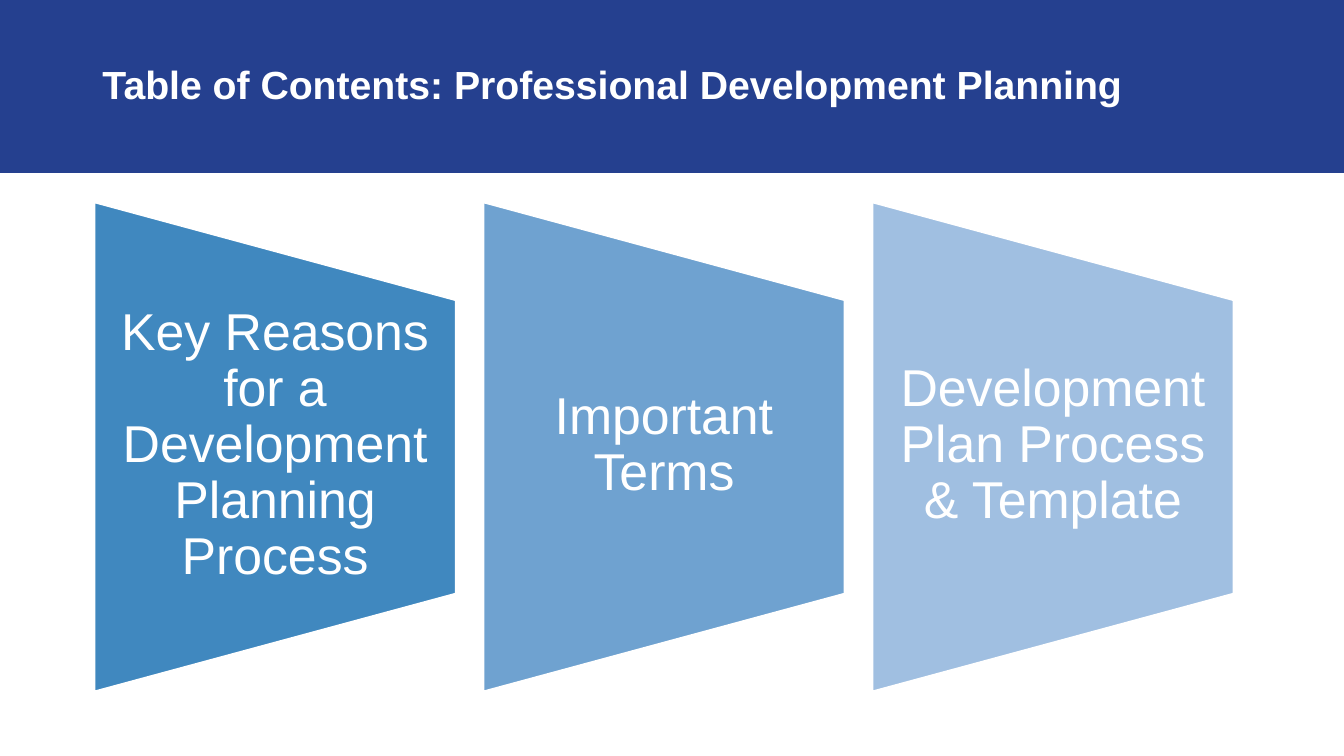
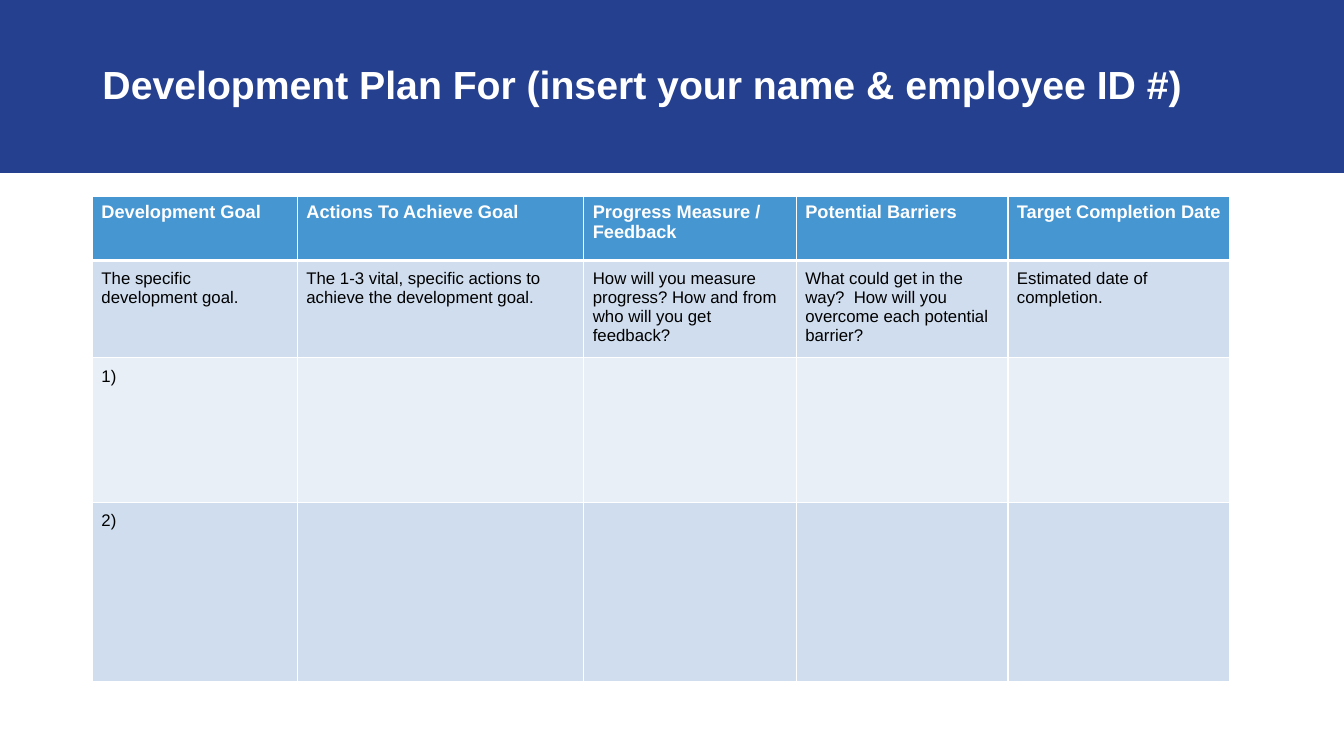
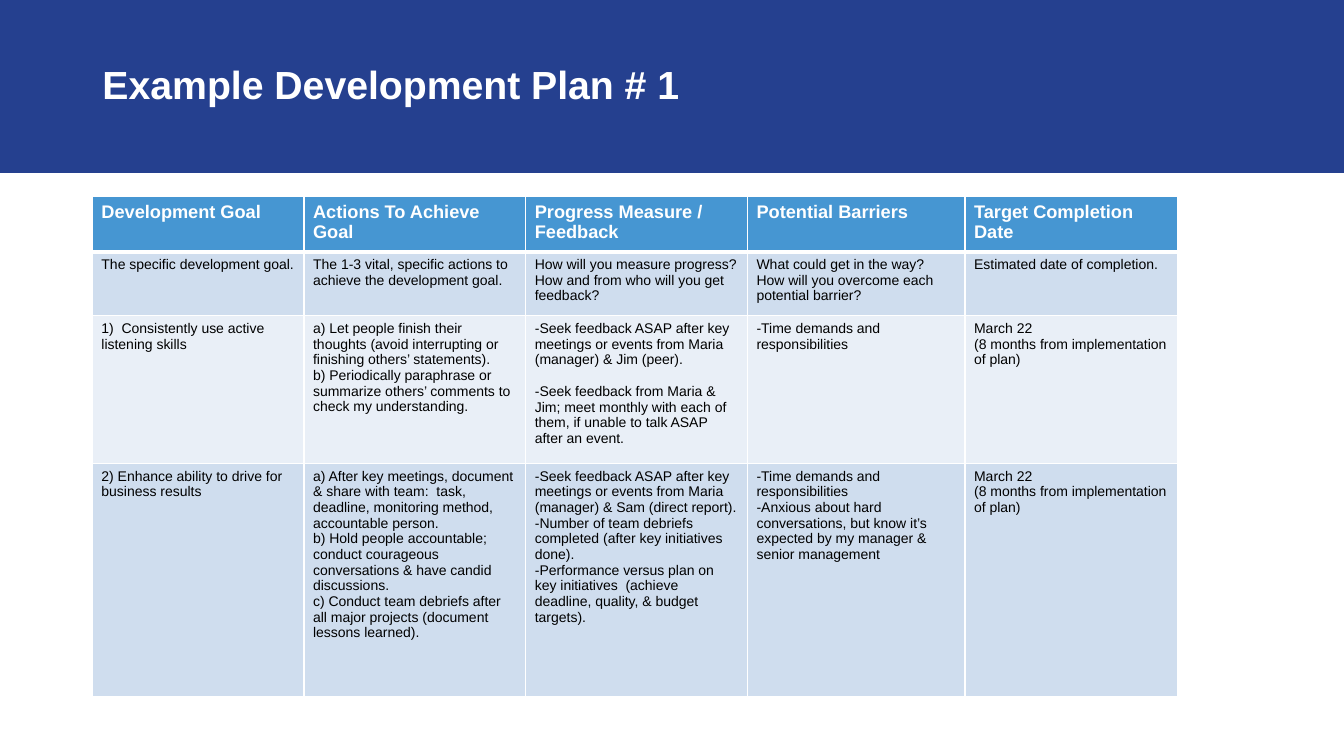
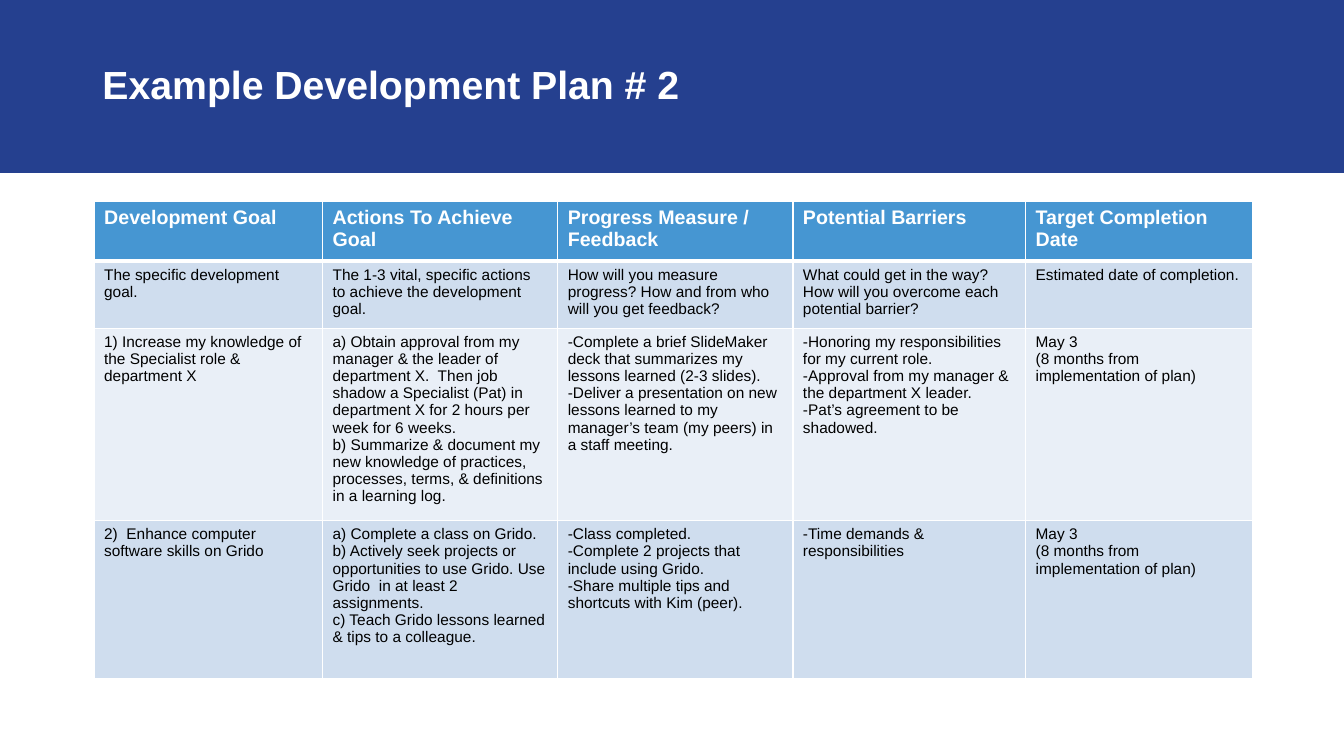
"""Build the professional development planning slides."""
from dataclasses import dataclass

from pptx import Presentation
from pptx.dml.color import RGBColor
from pptx.enum.shapes import MSO_SHAPE as Preset
from pptx.enum.text import MSO_ANCHOR as Anchor, MSO_AUTO_SIZE as AutoSize, PP_ALIGN as Align
from pptx.oxml import parse_xml
from pptx.oxml.ns import nsdecls
from pptx.util import Inches, Pt


@dataclass(frozen=True)
class Theme:
    font: str = "Arial"
    white: str = "FFFFFF"
    ink: str = "000000"
    band: str = "25408F"
    header: str = "4696D2"
    stripes: tuple = ("CFDDEE", "E9EFF7")
    steps: tuple = ("4088BF", "6FA2D0", "A0BFE1")
    title_size: int = 28
    step_size: int = 37
    tight: float = 0.9
    border: int = 1
    header_border: int = 3


HEADERS = ("Development Goal", "Actions To Achieve Goal", "Progress Measure / Feedback",
           "Potential Barriers", "Target Completion Date")
GUIDE = ("The specific development goal.",
         "The 1-3 vital, specific actions to achieve the development goal.",
         "How will you measure progress? How and from who will you get feedback?",
         "What could get in the way?  How will you overcome each potential barrier?",
         "Estimated date of completion.")
MARCH = "March 22\n(8 months from implementation of plan)"
MAY = "May 3\n(8 months from implementation of plan)"

BLANK_GOALS = (("1)", "", "", "", ""), ("2)", "", "", "", ""))
LEADER_GOALS = (
    ("1)  Consistently use active listening skills",
     "a) Let people finish their thoughts (avoid interrupting or finishing others’ statements).\n"
     "b) Periodically paraphrase or summarize others’ comments to check my understanding.",
     "-Seek feedback ASAP after key meetings or events from Maria (manager) & Jim (peer).\n\n"
     "-Seek feedback from Maria & Jim; meet monthly with each of them, "
     "if unable to talk ASAP after an event.",
     "-Time demands and responsibilities",
     MARCH),
    ("2) Enhance ability to drive for business results",
     "a) After key meetings, document & share with team:  task, deadline, "
     "monitoring method, accountable person.\n"
     "b) Hold people accountable; conduct courageous conversations & have candid discussions.\n"
     "c) Conduct team debriefs after all major projects (document lessons learned).",
     "-Seek feedback ASAP after key meetings or events from Maria (manager) "
     "& Sam (direct report).\n"
     "-Number of team debriefs completed (after key initiatives done).\n"
     "-Performance versus plan on key initiatives  (achieve deadline, quality, "
     "& budget targets).",
     "-Time demands and responsibilities\n"
     "-Anxious about hard conversations, but know it’s expected by my manager "
     "& senior management",
     MARCH),
)
SPECIALIST_GOALS = (
    ("1) Increase my knowledge of the Specialist role &  department X",
     "a) Obtain approval from my manager & the leader of department X.  Then job shadow "
     "a Specialist (Pat) in department X for 2 hours per week for 6 weeks.\n"
     "b) Summarize & document my new knowledge of practices, processes, terms, "
     "& definitions in a learning log.",
     "-Complete a brief SlideMaker deck that summarizes my lessons learned (2-3 slides).\n"
     "-Deliver a presentation on new lessons learned to my manager’s team (my peers) "
     "in a staff meeting.",
     "-Honoring my responsibilities for my current role.\n"
     "-Approval from my manager & the department X leader.\n"
     "-Pat’s agreement to be shadowed.",
     MAY),
    ("2)  Enhance computer software skills on Grido",
     "a) Complete a class on Grido.\n"
     "b) Actively seek projects or opportunities to use Grido. Use Grido  in at least "
     "2 assignments.\n"
     "c) Teach Grido lessons learned & tips to a colleague.",
     "-Class completed.\n"
     "-Complete 2 projects that include using Grido.\n"
     "-Share multiple tips and shortcuts with Kim (peer).",
     "-Time demands & responsibilities",
     MAY),
)


class Deck:
    """Hold the theme, the 16 by 9 grid and the current slide."""

    def __init__(self, theme):
        self.theme = theme
        self.presentation = Presentation()
        self.presentation.slide_width = Inches(13.33)
        self.presentation.slide_height = Inches(7.5)
        self.layout = self.presentation.slide_layouts[5]
        self.slide = None

    def columns(self, count):
        """Return the width of a number of grid columns."""
        return round(self.presentation.slide_width * count / 16)

    def rows(self, count):
        """Return the height of a number of grid rows."""
        return round(self.presentation.slide_height * count / 9)

    def box(self, left, top, width, height):
        """Return a grid box as left, top, width and height."""
        return self.columns(left), self.rows(top), self.columns(width), self.rows(height)

    def style(self, paragraph, size, color, bold=False):
        """Format every run of a paragraph."""
        for run in paragraph.runs:
            run.font.name = self.theme.font
            run.font.size = Pt(size)
            run.font.bold = bold
            run.font.color.rgb = RGBColor.from_string(color)

    def shape(self, preset, box, fill, line=None):
        """Add a flat preset shape."""
        shape = self.slide.shapes.add_shape(preset, *box)
        shape.shadow.inherit = False
        shape.fill.solid()
        shape.fill.fore_color.rgb = RGBColor.from_string(fill)
        if line:
            shape.line.color.rgb = RGBColor.from_string(line)
            shape.line.width = Pt(2)
        else:
            shape.line.fill.background()
        return shape

    def add_slide(self, title):
        """Start a slide, placing the shared band on the layout the first time."""
        first = self.slide is None
        self.slide = self.presentation.slides.add_slide(self.layout)
        if first:
            band = self.shape(Preset.RECTANGLE, self.box(0, 0, 16, 2.06), self.theme.band)
            self.layout.shapes.element.insert(2, band.element)
        heading = self.slide.shapes.title
        heading.left, heading.top, heading.width, heading.height = self.box(1.1, 0.26, 13.57, 1.54)
        frame = heading.text_frame
        frame.text = title
        frame.auto_size = AutoSize.NONE
        frame.vertical_anchor = Anchor.MIDDLE
        paragraph = frame.paragraphs[0]
        paragraph.alignment = Align.LEFT
        paragraph.line_spacing = self.theme.tight
        self.style(paragraph, self.theme.title_size, self.theme.white, bold=True)

    def step(self, index, text):
        """Add one tapering panel of the contents row with its label."""
        left, width, length = 1.12 + 4.63 * index, 4.31, 5.84
        panel = self.shape(Preset.FLOWCHART_MANUAL_OPERATION,
                           self.box(left + (width - length) / 2, 5.32 - width / 2, length, width),
                           self.theme.steps[index], self.theme.white)
        panel.rotation = 270
        label = self.slide.shapes.add_textbox(*self.box(left, 3.56, width, 3.5))
        frame = label.text_frame
        frame.word_wrap = True
        frame.vertical_anchor = Anchor.MIDDLE
        frame.margin_left = frame.margin_right = Inches(0.26)
        frame.margin_top = frame.margin_bottom = 0
        frame.text = text
        paragraph = frame.paragraphs[0]
        paragraph.alignment = Align.CENTER
        paragraph.line_spacing = self.theme.tight
        self.style(paragraph, self.theme.step_size, self.theme.white)

    def borders(self, cell, row):
        """Draw the cell borders, thicker under the header row."""
        thick, thin = self.theme.header_border, self.theme.border
        widths = {"L": thin, "R": thin, "T": thick if row == 1 else thin,
                  "B": thick if row == 0 else thin}
        properties = cell._tc.get_or_add_tcPr()
        for side, width in widths.items():
            properties.append(parse_xml(
                f'<a:ln{side} {nsdecls("a")} w="{Pt(width)}"><a:solidFill>'
                f'<a:srgbClr val="{self.theme.white}"/></a:solidFill></a:ln{side}>'))

    def cell(self, cell, row, text, size, margins):
        """Fill and format one table cell; a blank line in text becomes a gap."""
        theme = self.theme
        is_header = row == 0
        self.borders(cell, row)
        cell.fill.solid()
        fill = theme.header if is_header else theme.stripes[(row - 1) % 2]
        cell.fill.fore_color.rgb = RGBColor.from_string(fill)
        side, top, bottom = margins
        cell.margin_left = cell.margin_right = Inches(side)
        cell.margin_top, cell.margin_bottom = Inches(top), Inches(bottom)
        blocks = text.split("\n\n")
        openings = [block.split("\n")[0] for block in blocks[1:]]
        cell.text_frame.text = "\n".join(blocks)
        for paragraph in cell.text_frame.paragraphs:
            if paragraph.text in openings:
                paragraph.space_before = Pt(size * 1.15)
            self.style(paragraph, size, theme.white if is_header else theme.ink, is_header)

    def plan(self, goals, corner, widths, heights, sizes, side=0.09, body_margins=(0.05, 0.05)):
        """Add a development plan table."""
        records = (HEADERS, GUIDE, *goals)
        box = self.box(*corner, sum(widths), sum(heights))
        table = self.slide.shapes.add_table(len(records), len(HEADERS), *box).table
        for column, width in zip(table.columns, widths):
            column.width = self.columns(width)
        for row, (record, height) in enumerate(zip(records, heights)):
            table.rows[row].height = self.rows(height)
            margins = (side, *(body_margins if row else (0.05, 0.05)))
            for column, text in enumerate(record):
                self.cell(table.cell(row, column), row, text, sizes[min(row, 1)], margins)


def main():
    """Build and save the presentation."""
    deck = Deck(Theme())

    deck.add_slide("Table of Contents: Professional Development Planning")
    for index, text in enumerate(("Key Reasons for a Development Planning Process",
                                  "Important Terms",
                                  "Development Plan Process & Template")):
        deck.step(index, text)

    deck.add_slide("Development Plan For (insert your name & employee ID #)")
    deck.plan(BLANK_GOALS, corner=(1.1, 2.34), widths=(2.44, 3.41, 2.53, 2.52, 2.64),
              heights=(0.76, 1.16, 1.72, 2.14), sizes=(13, 12), body_margins=(0.09, 0.04))

    deck.add_slide("Example Development Plan # 1")
    deck.plan(LEADER_GOALS, corner=(1.1, 2.34), widths=(2.52, 2.64, 2.64, 2.59, 2.53),
              heights=(0.66, 0.76, 1.76, 2.77), sizes=(13, 10))

    deck.add_slide("Example Development Plan # 2")
    deck.plan(SPECIALIST_GOALS, corner=(1.12, 2.4), widths=(2.72, 2.8, 2.8, 2.77, 2.7),
              heights=(0.71, 0.8, 2.29, 1.88), sizes=(14, 11), side=0.1)

    deck.presentation.save("out.pptx")


if __name__ == "__main__":
    main()
